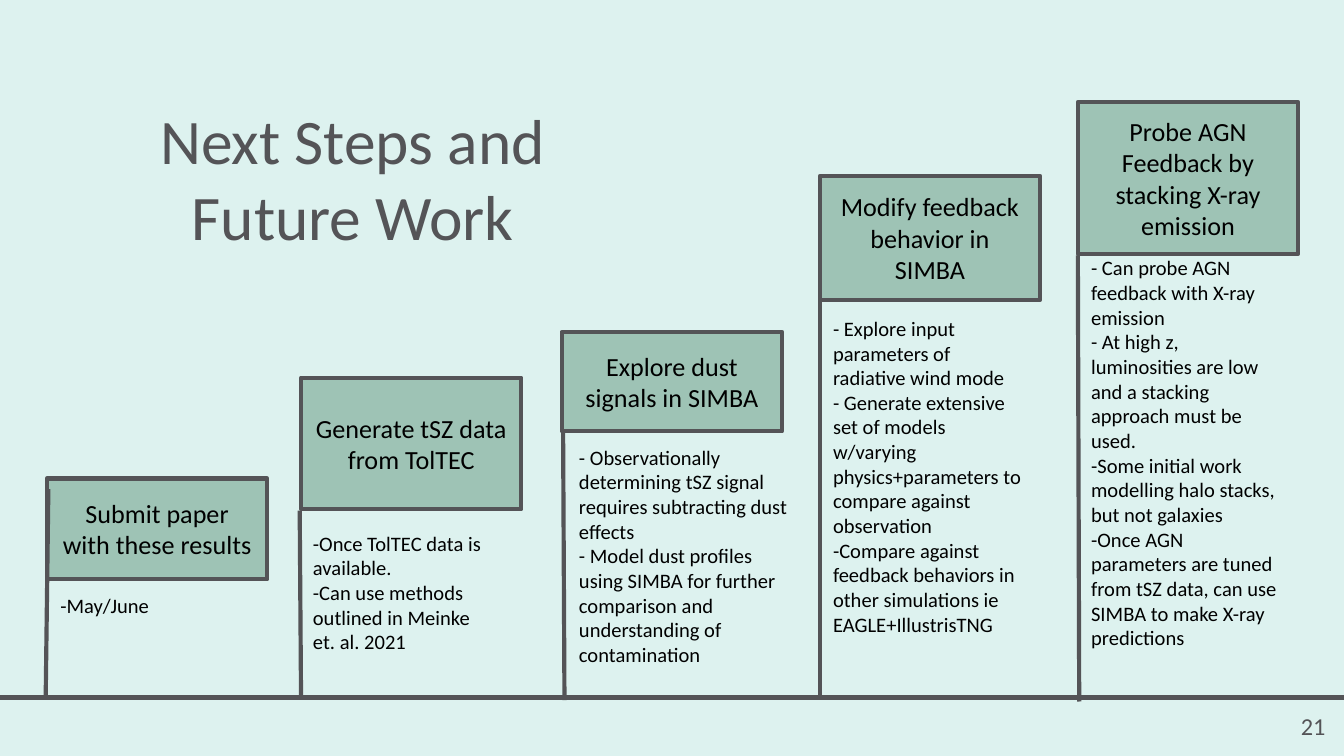
from lxml import etree
from pptx import Presentation
from pptx.dml.color import RGBColor
from pptx.enum.shapes import MSO_CONNECTOR, MSO_SHAPE
from pptx.enum.text import MSO_ANCHOR, MSO_AUTO_SIZE, PP_ALIGN
from pptx.oxml.ns import qn
from pptx.util import Inches, Pt

RECTANGLE = MSO_SHAPE.RECTANGLE
STRAIGHT = MSO_CONNECTOR.STRAIGHT
LEFT, CENTER, RIGHT = PP_ALIGN.LEFT, PP_ALIGN.CENTER, PP_ALIGN.RIGHT
TOP, MIDDLE = MSO_ANCHOR.TOP, MSO_ANCHOR.MIDDLE
NO_AUTOFIT = MSO_AUTO_SIZE.NONE

BACKGROUND, GREEN, GRAY, BLACK = "DDF2EF", "9EC3B5", "545457", "000000"
STEP_WIDTH = 1.64


def write_text(shape, paragraphs, size, color=BLACK, align=LEFT, anchor=TOP, top_inset=0.1):
    frame = shape.text_frame
    frame.word_wrap = True
    frame.auto_size = NO_AUTOFIT
    frame.vertical_anchor = anchor
    frame.margin_left = frame.margin_right = frame.margin_bottom = Inches(0.1)
    frame.margin_top = Inches(top_inset)
    for index, text in enumerate(paragraphs):
        para = frame.add_paragraph() if index else frame.paragraphs[0]
        para.alignment = align
        span = para.add_run()
        span.text = text
        span.font.name = "Calibri"
        span.font.size = Pt(size)
        span.font.color.rgb = RGBColor.from_string(color)


def draw_line(start, end, width):
    line = page.shapes.add_connector(STRAIGHT, *map(Inches, start + end))
    line.line.color.rgb = RGBColor.from_string(GRAY)
    line.line.width = Pt(width)
    etree.SubElement(line._element.spPr, qn("a:effectLst"))


# Each step: heading, box (left, top, height), riser (start, end),
# notes box (left, top, width, height), notes
steps = [
    ("Submit paper with these results", (0.35, 3.56, 0.75),
     ((0.34, 5.2), (0.36, 3.64)), (0.35, 4.31, 1.51, 0.39),
     ["-May/June"]),
    ("Generate tSZ data from TolTEC", (2.24, 2.81, 0.98),
     ((2.24, 5.18), (2.23, 3.8)), (2.23, 3.85, 1.51, 1.13),
     ["-Once TolTEC data is available.",
      "-Can use methods outlined in Meinke et. al. 2021"]),
    ("Explore dust signals in SIMBA", (4.18, 2.47, 0.74),
     ((4.2, 5.21), (4.19, 3.22)), (4.21, 3.21, 1.77, 1.87),
     ["- Observationally determining tSZ signal requires subtracting dust effects",
      "- Model dust profiles using SIMBA for further comparison and "
      "understanding of contamination"]),
    ("Modify feedback behavior in SIMBA", (6.1, 1.31, 0.92),
     ((6.1, 5.18), (6.1, 1.95)), (6.1, 2.25, 1.64, 2.79),
     ["- Explore input parameters of radiative wind mode",
      "- Generate extensive set of models w/varying physics+parameters to "
      "compare against observation",
      "-Compare against feedback behaviors in other simulations ie "
      "EAGLE+IllustrisTNG"]),
    ("Probe AGN Feedback by stacking X-ray emission", (8.02, 0.76, 1.13),
     ((8.03, 5.22), (8.02, 1.9)), (8.02, 1.8, 1.63, 3.53),
     ["- Can probe AGN feedback with X-ray emission",
      "- At high z, luminosities are low and a stacking approach must be used.",
      "-Some initial work modelling halo stacks, but not galaxies",
      "-Once AGN parameters are tuned from tSZ data, can use SIMBA to make "
      "X-ray predictions"]),
]

deck = Presentation()
deck.slide_width = Inches(10)
deck.slide_height = Inches(10 * 9 / 16)
page = deck.slides.add_slide(deck.slide_layouts[5])
page.background.fill.solid()
page.background.fill.fore_color.rgb = RGBColor.from_string(BACKGROUND)

title = page.shapes.title
title.left, title.top = Inches(0.05), Inches(0.87)
title.width, title.height = Inches(5.15), Inches(0.92)
write_text(title, ["Next Steps and", "Future Work"], 34, color=GRAY,
           align=CENTER, anchor=MIDDLE, top_inset=0.07)

page_number = page.shapes.add_textbox(*map(Inches, (9.36, 5.19, 0.6, 0.43)))
write_text(page_number, ["21"], 13, color=GRAY, align=RIGHT)

draw_line((-0.01, 5.19), (10.01, 5.19), 3)

for heading, (left, top, height), (start, end), notes_area, notes in steps:
    box = page.shapes.add_shape(
        RECTANGLE, *map(Inches, (left, top, STEP_WIDTH, height)))
    box.shadow.inherit = False
    box.fill.solid()
    box.fill.fore_color.rgb = RGBColor.from_string(GREEN)
    box.line.color.rgb = RGBColor.from_string(GRAY)
    box.line.width = Pt(2.25)
    write_text(box, [heading], 14, align=CENTER, anchor=MIDDLE)
    draw_line(start, end, 2.25)
    notes_box = page.shapes.add_textbox(*map(Inches, notes_area))
    write_text(notes_box, notes, 11)

deck.save("out.pptx")
